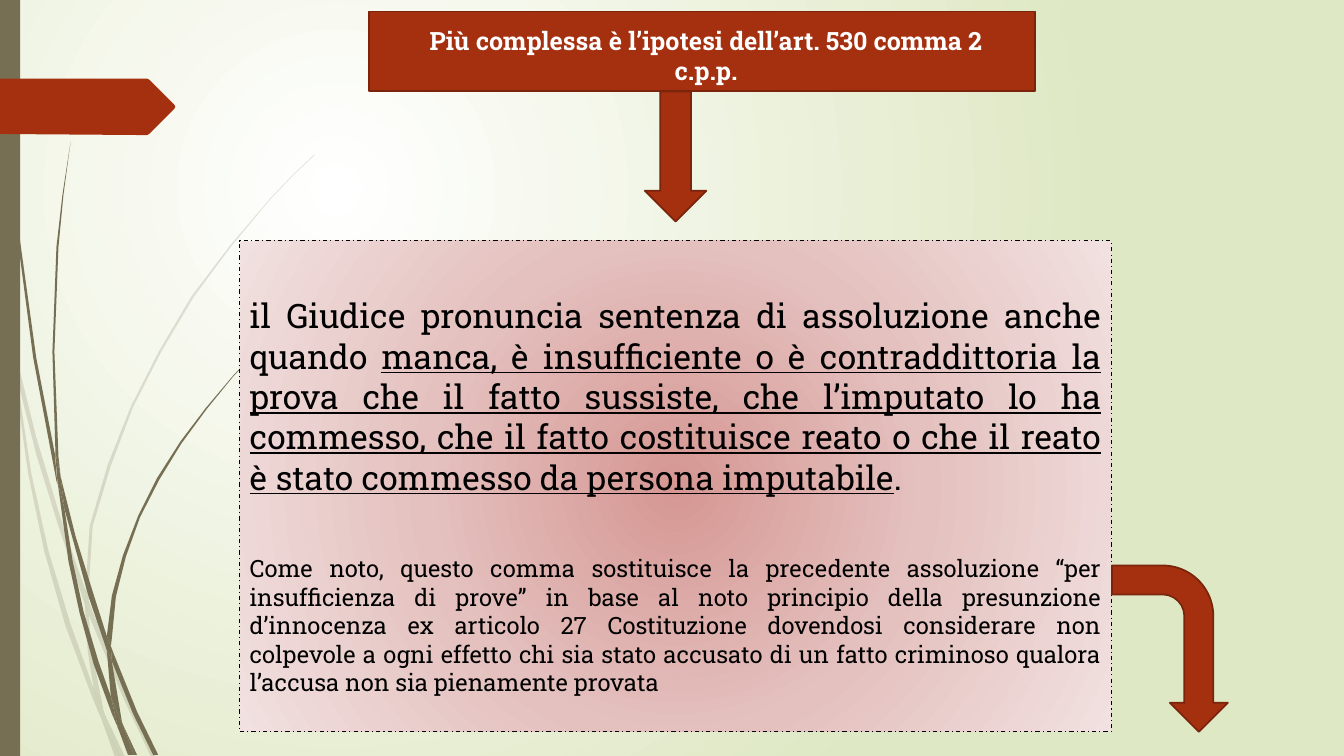
from lxml import etree
from pptx import Presentation
from pptx import util as u
from pptx.dml.color import RGBColor
from pptx.enum import dml, shapes, text
from pptx.oxml.ns import qn

COLOURS = {"olive": "766F54", "rust": "A53010", "edge": "7A240C",
           "black": "000000", "white": "FFFFFF"}
FONT = "Roboto Slab"
PAGE_GRADIENT = [(0, "FFFFFF"), (100, "DFE8C4")]
BODY_GRADIENT = [(0, "D69793"), (50, "E4C1BF"), (100, "F1E1E0")]

TITLE = "Più complessa è l’ipotesi dell’art. 530 comma 2 c.p.p."
# Each paragraph: size, space before, runs of (words, underlined)
BODY = [
    (24, 0, [
        ("il Giudice pronuncia sentenza di assoluzione anche quando ", False),
        ("manca, è insufficiente o è contraddittoria la prova che il fatto "
         "sussiste, che l’imputato lo ha commesso, che il fatto costituisce "
         "reato o che il reato è stato commesso da persona imputabile", True),
        (".", False)]),
    (17, 40.6, [
        ("Come noto, questo comma sostituisce la precedente assoluzione “per "
         "insufficienza di prove” in base al noto principio della presunzione "
         "d’innocenza ex articolo 27 Costituzione dovendosi considerare non "
         "colpevole a ogni effetto chi sia stato accusato di un fatto criminoso "
         "qualora l’accusa non sia pienamente provata", False)]),
]

# Outlines are counted in steps of this many points
STEP = 0.72
PALE_GRASS = [
    [(11, 350), (9, 322), (0, 282), (0, 299), (10, 344)],
    [(58, 522), (84, 599), (85, 586), (62, 520), (36, 434), (14, 345), (17, 376),
     (36, 451)],
    [(92, 607), (88, 596), (88, 610), (123, 694), (150, 751), (155, 751), (127, 692)],
    [(119, 751), (124, 751), (105, 711)],
    [(93, 683), (70, 619), (48, 546), (31, 469), (17, 376), (11, 350), (28, 470),
     (44, 547), (65, 621), (92, 693), (101, 714), (99, 707)],
    [(84, 599), (87, 646), (93, 683), (96, 692), (105, 711), (103, 706), (91, 646),
     (88, 610), (88, 608)],
    [(88, 584), (92, 522), (110, 462), (132, 404), (160, 349), (192, 295), (229, 245),
     (268, 198), (290, 175), (312, 154), (312, 153), (289, 175), (268, 197),
     (228, 244), (190, 294), (158, 348), (130, 403), (107, 461), (89, 522),
     (85, 584), (85, 586), (88, 596)],
    [(101, 714), (114, 751), (119, 751)],
    [(88, 608), (88, 610), (88, 596), (85, 586), (84, 599)],
    [(96, 692), (93, 683), (99, 707), (101, 714), (119, 751), (105, 711)],
]
DARK_GRASS = [
    [(7, 110), (17, 233), (33, 355), (56, 477), (57, 481), (55, 457), (55, 453),
     (36, 355), (19, 232), (8, 109), (5, 48), (4, 0), (3, 0), (4, 48)],
    [(88, 592), (106, 645), (106, 631), (93, 590), (75, 532), (60, 472), (64, 505)],
    [(113, 649), (110, 641), (111, 656), (132, 708), (152, 749), (157, 749),
     (136, 706)],
    [(110, 691), (98, 657), (83, 607), (72, 556), (64, 505), (57, 477), (68, 557),
     (79, 608), (93, 659), (111, 708), (117, 722), (116, 717)],
    [(60, 472), (58, 453), (54, 349), (58, 245), (63, 193), (70, 141), (62, 193),
     (56, 245), (52, 349), (55, 449)],
    [(133, 749), (136, 749), (122, 719)],
    [(57, 477), (64, 505), (60, 472), (55, 449), (55, 453)],
    [(111, 633), (115, 592), (125, 552), (139, 513), (158, 476), (180, 440),
     (205, 406), (231, 374), (245, 359), (261, 344), (260, 344), (245, 358),
     (231, 373), (204, 405), (179, 438), (156, 474), (137, 512), (122, 551),
     (111, 591), (106, 631), (110, 641)],
    [(117, 722), (127, 749), (131, 749)],
    [(106, 645), (110, 691), (116, 706), (122, 719), (121, 716), (111, 656),
     (109, 651)],
    [(106, 645), (109, 651), (111, 656), (110, 641), (106, 631)],
    [(116, 706), (110, 691), (116, 717), (117, 722), (130, 749), (133, 749),
     (122, 719)],
]
PAGE_TAG = [(0, 78), (146, 78), (148, 79), (173, 104), (174, 106), (173, 108),
            (148, 133), (146, 134), (136, 134), (0, 133)]

KIND = shapes.MSO_SHAPE
# Kind, (left, top, width, height), fill, edge, rotation
SIDE_BAR = (KIND.RECTANGLE, (0, 0, 14.4, 540), "olive", None, 0)
BODY_BOX = (KIND.RECTANGLE, (171.2, 172.1, 622.6, 350.6), None, "black", 0)
TITLE_BAR = (KIND.RECTANGLE, (263.5, 8.2, 475.9, 56.9), "rust", "edge", 0)
DOWN_ARROW = (KIND.DOWN_ARROW, (460.6, 65.3, 43.9, 92.9), "rust", "edge", 0)
BENT_ARROW = (KIND.BENT_ARROW, (776.2, 421.9, 118.8, 82.8), "rust", "edge", 90)
TITLE_PLACE = (288, 14.4, 432.7, 51.1)


def rgb(name):
    return RGBColor.from_string(COLOURS[name])


def radial(fill, owner, stops, focus):
    """Give a fill a circular gradient; focus is left, top, right, bottom in %."""
    fill.gradient()
    gradient = next(owner.iter(qn("a:gradFill")))
    gradient.clear()
    stop_list = etree.SubElement(gradient, qn("a:gsLst"))
    for position, colour in stops:
        stop = etree.SubElement(stop_list, qn("a:gs"), pos=str(position * 1000))
        etree.SubElement(stop, qn("a:srgbClr"), val=colour)
    circle = etree.SubElement(gradient, qn("a:path"), {"path": "circle"})
    sides = {side: str(part * 1000) for side, part in zip("ltrb", focus)}
    etree.SubElement(circle, qn("a:fillToRect"), sides)


def paint(shape, fill, edge=None):
    shape.shadow.inherit = False
    if fill:
        shape.fill.solid()
        shape.fill.fore_color.rgb = rgb(fill)
    if edge:
        shape.line.color.rgb = rgb(edge)
        shape.line.width = u.Pt(1.25)
    else:
        shape.line.fill.background()


def add_outline(holder, steps, fill):
    corners = [(u.Pt(x * STEP), u.Pt(y * STEP)) for x, y in steps]
    builder = holder.shapes.build_freeform(*corners[0])
    builder.add_line_segments(corners[1:])
    outline = builder.convert_to_shape()
    paint(outline, fill)
    return outline


def add_grass(page, blades, opacity):
    tuft = page.shapes.add_group_shape()
    for steps in blades:
        blade = add_outline(tuft, steps, "olive")
        if opacity < 100:
            colour = next(blade._element.spPr.iter(qn("a:srgbClr")))
            etree.SubElement(colour, qn("a:alpha"), val=str(opacity * 1000))


def add_block(page, kind, place, fill, edge, rotation):
    block = page.shapes.add_shape(kind, *map(u.Pt, place))
    block.rotation = rotation
    paint(block, fill, edge)
    return block


def add_span(para, words, colour, **formats):
    span = para.add_run()
    span.text = words
    span.font.color.rgb = rgb(colour)
    for name, value in {"name": FONT, **formats}.items():
        setattr(span.font, name, value)


def write_body(box):
    frame = box.text_frame
    settings = {"word_wrap": True, "vertical_anchor": text.MSO_ANCHOR.TOP,
                "margin_top": u.Pt(38.8)}
    for name, value in settings.items():
        setattr(frame, name, value)
    for index, (size, space, spans) in enumerate(BODY):
        para = frame.add_paragraph() if index else frame.paragraphs[0]
        para.alignment = text.PP_ALIGN.JUSTIFY
        para.space_before = u.Pt(space)
        for words, underlined in spans:
            add_span(para, words, "black", size=u.Pt(size), underline=underlined)


def main():
    deck = Presentation()
    deck.slide_width, deck.slide_height = u.Pt(960), u.Pt(540)
    page = deck.slides.add_slide(deck.slide_layouts[6])
    radial(page.background.fill, page._element, PAGE_GRADIENT, (50, 50, 100, 100))

    add_grass(page, PALE_GRASS, 20)
    add_grass(page, DARK_GRASS, 100)
    add_block(page, *SIDE_BAR)
    add_outline(page, PAGE_TAG, "rust")

    body = add_block(page, *BODY_BOX)
    radial(body.fill, body._element, BODY_GRADIENT, (50, 50, 50, 50))
    body.line.color.rgb = rgb("black")
    body.line.width = u.Pt(0.75)
    body.line.dash_style = dml.MSO_LINE.DASH_DOT
    write_body(body)

    add_block(page, *TITLE_BAR)
    title = page.shapes.add_textbox(*map(u.Pt, TITLE_PLACE)).text_frame
    title.word_wrap = True
    title.paragraphs[0].alignment = text.PP_ALIGN.CENTER
    add_span(title.paragraphs[0], TITLE, "white", size=u.Pt(18), bold=True)
    for arrow in (DOWN_ARROW, BENT_ARROW):
        add_block(page, *arrow)
    deck.save("out.pptx")


if __name__ == "__main__":
    main()
